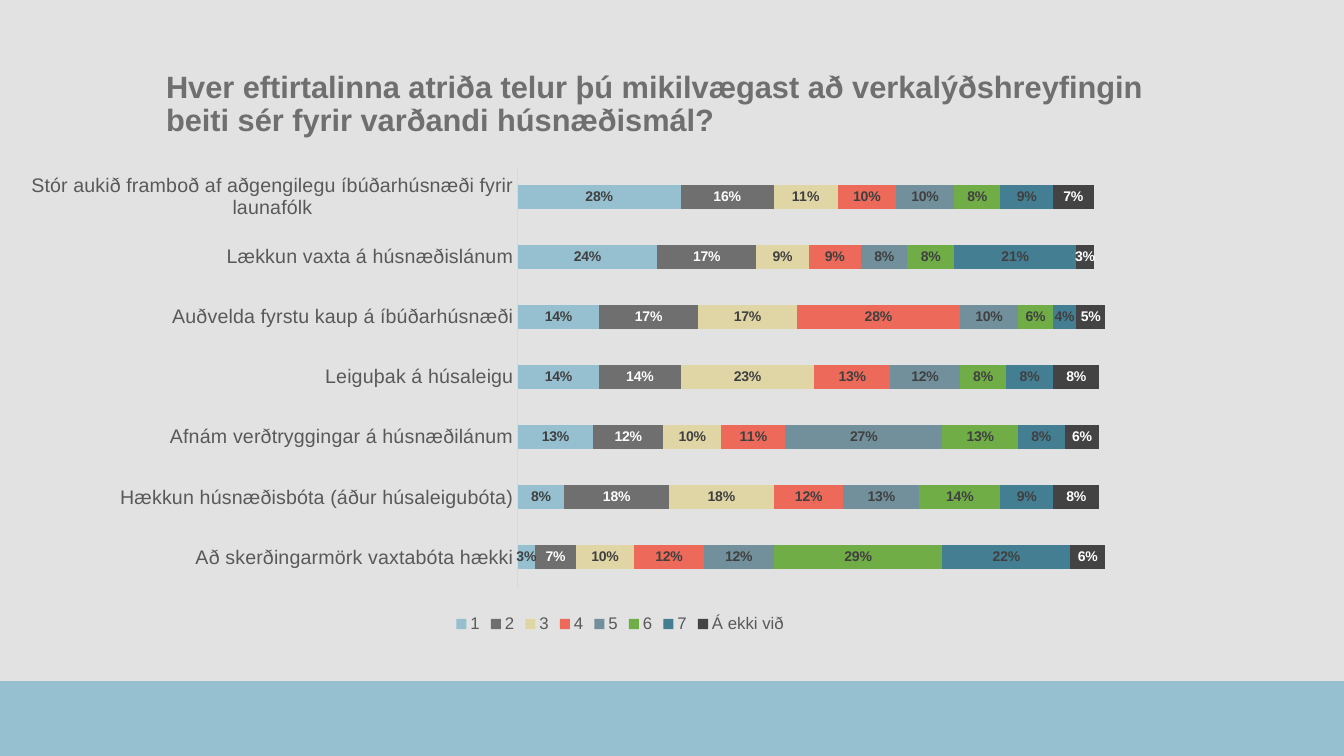
import pptx
import pptx.chart.data
import pptx.dml.color
import pptx.enum.chart
import pptx.enum.shapes
import pptx.enum.text
import pptx.oxml
import pptx.oxml.ns
import pptx.util

Pt = pptx.util.Pt
FONT = "Arial"
COLORS = {
    "background": "E2E2E2",
    "band": "96C0CF",
    "title": "706F6F",
    "chart_text": "000000",
    "axis_text": "595959",
    "axis_line": "D9D9D9",
    "dark_label": "404040",
    "light_label": "FFFFFF",
}
PRIORITIES = [
    "Að skerðingarmörk vaxtabóta hækki",
    "Hækkun húsnæðisbóta (áður húsaleigubóta)",
    "Afnám verðtryggingar á húsnæðilánum",
    "Leiguþak á húsaleigu",
    "Auðvelda fyrstu kaup á íbúðarhúsnæði",
    "Lækkun vaxta á húsnæðislánum",
    "Stór aukið framboð af aðgengilegu íbúðarhúsnæði fyrir launafólk",
]
RANKS = [
    ("1", "96C0CF", "dark_label", [0.03, 0.08, 0.13, 0.14, 0.14, 0.24, 0.28]),
    ("2", "706F6F", "light_label", [0.07, 0.18, 0.12, 0.14, 0.17, 0.17, 0.16]),
    ("3", "DFD5A5", "dark_label", [0.10, 0.18, 0.10, 0.23, 0.17, 0.09, 0.11]),
    ("4", "ED6959", "dark_label", [0.12, 0.12, 0.11, 0.13, 0.28, 0.09, 0.10]),
    ("5", "71909C", "dark_label", [0.12, 0.13, 0.27, 0.12, 0.10, 0.08, 0.10]),
    ("6", "70AD47", "dark_label", [0.29, 0.14, 0.13, 0.08, 0.06, 0.08, 0.08]),
    ("7", "437E93", "dark_label", [0.22, 0.09, 0.08, 0.08, 0.04, 0.21, 0.09]),
    ("Á ekki við", "434343", "light_label", [0.06, 0.08, 0.06, 0.08, 0.05, 0.03, 0.07]),
]


def rgb(hex_color):
    """Return the colour object for a hex string."""
    return pptx.dml.color.RGBColor.from_string(hex_color)


def paint(fill, hex_color):
    """Make a fill solid in one colour."""
    fill.solid()
    fill.fore_color.rgb = rgb(hex_color)


def style_font(font, size, hex_color, bold=False):
    """Set typeface, size, colour and weight."""
    font.name = FONT
    font.size = Pt(size)
    font.bold = bold
    font.color.rgb = rgb(hex_color)


def add_band(slide, left, top, width, height):
    """Add the plain coloured band at the foot of the slide."""
    band = slide.shapes.add_shape(
        pptx.enum.shapes.MSO_SHAPE.RECTANGLE, Pt(left), Pt(top), Pt(width), Pt(height)
    )
    band.shadow.inherit = False
    paint(band.fill, COLORS["band"])
    band.line.fill.background()


def add_title(slide, wording, left, top, width, height):
    """Add the question as a bold heading."""
    heading = slide.shapes.add_textbox(Pt(left), Pt(top), Pt(width), Pt(height))
    frame = heading.text_frame
    frame.word_wrap = True
    frame.vertical_anchor = pptx.enum.text.MSO_ANCHOR.MIDDLE
    paragraph = frame.paragraphs[0]
    paragraph.line_spacing = 0.9
    run = paragraph.add_run()
    run.text = wording
    style_font(run.font, 22, COLORS["title"], bold=True)


def place_plot(chart, x, y, w, h):
    """Fix the inner plot area as fractions of the chart."""
    plot_area = chart._chartSpace.chart.plotArea
    for old_layout in plot_area.findall(pptx.oxml.ns.qn("c:layout")):
        plot_area.remove(old_layout)
    sizes = "".join(
        f'<c:{tag} val="{share}"/>' for tag, share in zip("xywh", (x, y, w, h))
    )
    layout = pptx.oxml.parse_xml(
        f'<c:layout {pptx.oxml.ns.nsdecls("c")}><c:manualLayout>'
        '<c:layoutTarget val="inner"/><c:xMode val="edge"/><c:yMode val="edge"/>'
        f"{sizes}</c:manualLayout></c:layout>"
    )
    plot_area.insert(0, layout)


def style_axes(chart):
    """Show the priorities and hide the percentage scale."""
    priorities = chart.category_axis
    priorities.major_tick_mark = pptx.enum.chart.XL_TICK_MARK.NONE
    priorities.format.line.color.rgb = rgb(COLORS["axis_line"])
    priorities.format.line.width = Pt(0.75)
    style_font(priorities.tick_labels.font, 14, COLORS["axis_text"])
    shares = chart.value_axis
    shares.minimum_scale = 0
    shares.maximum_scale = 1.2
    shares.has_major_gridlines = False
    shares.visible = False


def style_series(series, fill_color, label_color):
    """Colour one rank and label its shares."""
    paint(series.format.fill, fill_color)
    series.invert_if_negative = False
    labels = series.data_labels
    labels.show_value = True
    labels.number_format = "0%"
    labels.number_format_is_linked = False
    style_font(labels.font, 10, label_color, bold=True)


def add_rank_chart(slide, left, top, width, height):
    """Add the stacked bars of ranks for each priority."""
    shares = pptx.chart.data.CategoryChartData(number_format="0%")
    shares.categories = PRIORITIES
    for name, _, _, values in RANKS:
        shares.add_series(name, values)
    chart = slide.shapes.add_chart(
        pptx.enum.chart.XL_CHART_TYPE.BAR_STACKED,
        Pt(left), Pt(top), Pt(width), Pt(height), shares,
    ).chart
    chart.has_title = False
    style_font(chart.font, 10, COLORS["chart_text"])
    bars = chart.plots[0]
    bars.gap_width = 150
    bars.overlap = 100
    bars.vary_by_categories = False
    for series, (_, fill_color, label, _) in zip(bars.series, RANKS):
        style_series(series, fill_color, COLORS[label])
    style_axes(chart)
    chart.has_legend = True
    chart.legend.position = pptx.enum.chart.XL_LEGEND_POSITION.BOTTOM
    chart.legend.include_in_layout = False
    style_font(chart.legend.font, 12, COLORS["axis_text"])
    place_plot(chart, 0.414, 0.034, 0.586, 0.864)


def main():
    """Build and save the slide."""
    deck = pptx.Presentation()
    deck.slide_width = Pt(960)
    deck.slide_height = Pt(540)
    slide = deck.slides.add_slide(deck.slide_layouts[6])
    paint(slide.background.fill, COLORS["background"])
    add_band(slide, 0, 486.5, 960, 53.5)
    add_title(
        slide,
        "Hver eftirtalinna atriða telur þú mikilvægast að verkalýðshreyfingin "
        "beiti sér fyrir varðandi húsnæðismál?",
        111.5, 50.5, 737.5, 49,
    )
    add_rank_chart(slide, 17.5, 107.5, 851, 347.5)
    deck.save("out.pptx")


if __name__ == "__main__":
    main()
